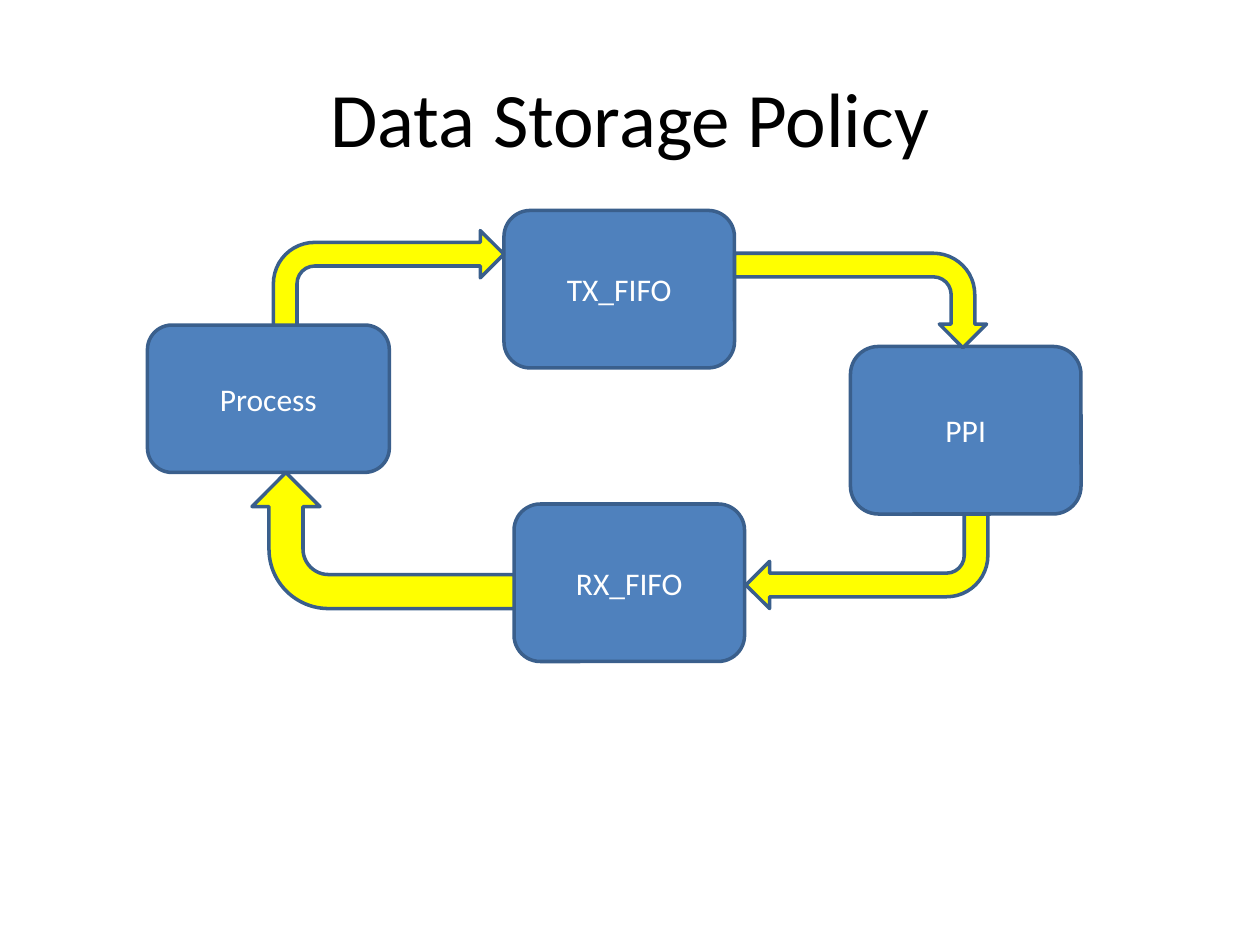
from pptx import Presentation
from pptx.dml.color import RGBColor
from pptx.enum import shapes, text
from pptx.util import Inches, Pt

COLORS = {"node": "4F81BD", "arrow": "FFFF00", "line": "3A5F8C",
          "title": "000000", "label": "FFFFFF"}
FONT = "Calibri"

# Positions are offsets from the top left of the cycle: left, top, width, height
NODES = [
    ("Process", 0, 0.91, 1.92, 1.17),
    ("TX_FIFO", 2.83, 0, 1.83, 1.25),
    ("PPI", 5.58, 1.08, 1.83, 1.33),
    ("RX_FIFO", 2.91, 2.33, 1.83, 1.25),
]
# Clockwise turn, then the area each arrow covers once turned
ARROWS = [
    (0, 1, 0.16, 1.83, 0.75),
    (270, 0.83, 2.08, 2.08, 1.08),
    (90, 4.66, 0.34, 2, 0.75),
    (180, 4.75, 2.41, 1.92, 0.75),
]


def rgb(name):
    return RGBColor.from_string(COLORS[name])


def write(shape, words, size, color):
    tf = shape.text_frame
    tf.text = words
    tf.word_wrap = True
    tf.vertical_anchor = text.MSO_ANCHOR.MIDDLE
    p = tf.paragraphs[0]
    p.alignment = text.PP_ALIGN.CENTER
    p.font.name = FONT
    p.font.size = Pt(size)
    p.font.color.rgb = rgb(color)


def add_title(s, words, x, y, w, h):
    title = s.shapes.title
    title.left, title.top = Inches(x), Inches(y)
    title.width, title.height = Inches(w), Inches(h)
    write(title, words, 44, "title")


def add_block(s, kind, fill, x, y, w, h):
    sp = s.shapes.add_shape(kind, Inches(x), Inches(y), Inches(w), Inches(h))
    sp.shadow.inherit = False
    sp.fill.solid()
    sp.fill.fore_color.rgb = rgb(fill)
    sp.line.color.rgb = rgb("line")
    sp.line.width = Pt(2)
    return sp


def add_arrow(s, turn, x, y, w, h):
    # A quarter turn swaps the sides around the same centre
    if turn % 180:
        x, y, w, h = x + (w - h) / 2, y + (h - w) / 2, h, w
    sp = add_block(s, shapes.MSO_SHAPE.BENT_ARROW, "arrow", x, y, w, h)
    sp.rotation = turn


def add_cycle(s, left, top):
    for label, x, y, w, h in NODES:
        sp = add_block(s, shapes.MSO_SHAPE.ROUNDED_RECTANGLE, "node",
                       left + x, top + y, w, h)
        write(sp, label, 18, "label")
    for turn, x, y, w, h in ARROWS:
        add_arrow(s, turn, left + x, top + y, w, h)


def main():
    prs = Presentation()
    prs.slide_width, prs.slide_height = Inches(10), Inches(7.5)
    s = prs.slides.add_slide(prs.slide_layouts.get_by_name("Title Only"))

    # Heading
    add_title(s, "Data Storage Policy", 0.5, 0.3, 9, 1.25)
    # Data cycle
    add_cycle(s, 1.17, 1.67)

    prs.save("out.pptx")


if __name__ == "__main__":
    main()
